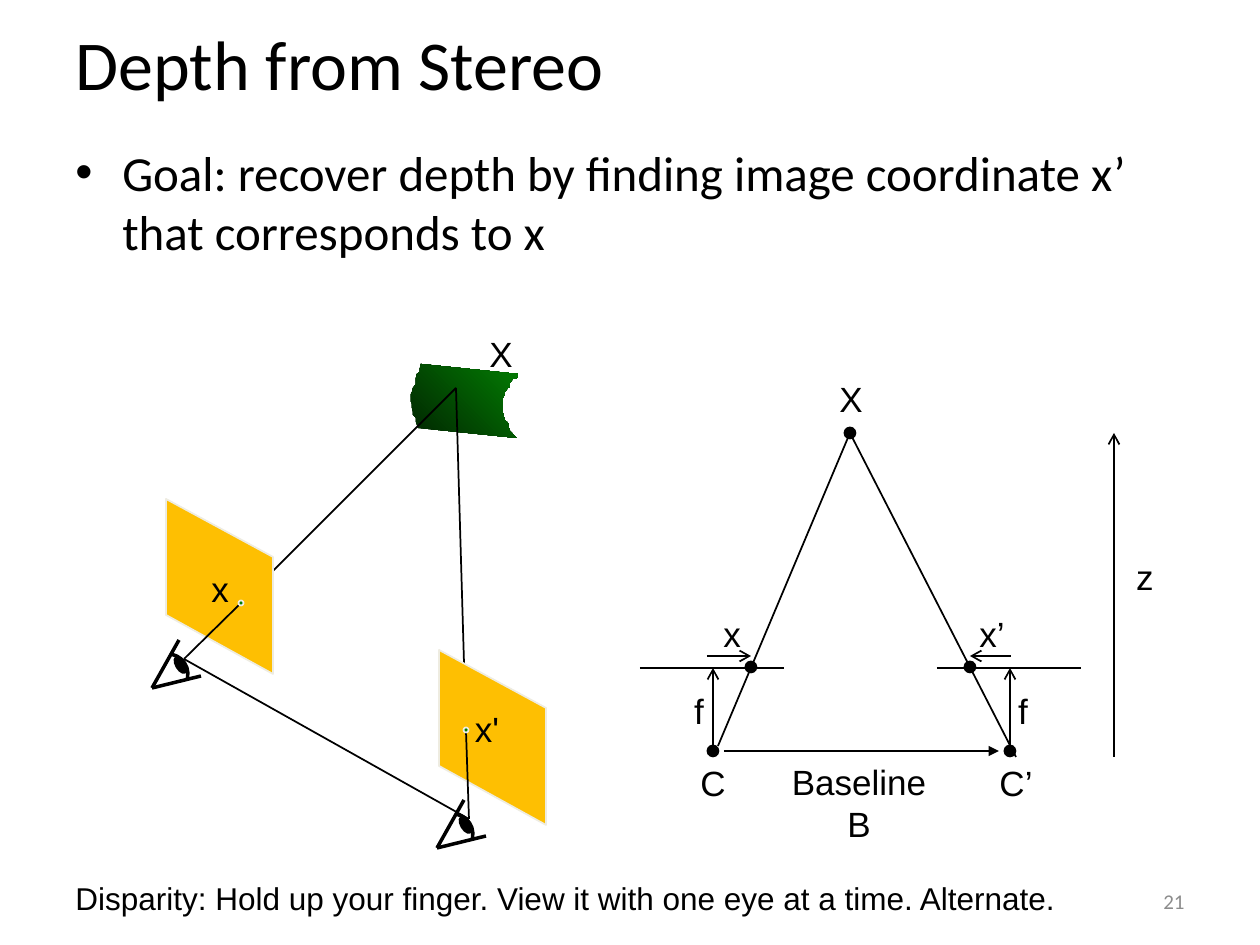
from lxml.etree import SubElement
from pptx import Presentation
from pptx.dml.color import RGBColor
from pptx.enum.shapes import MSO_CONNECTOR, MSO_SHAPE
from pptx.enum.text import MSO_ANCHOR, PP_ALIGN
from pptx.oxml.ns import qn
from pptx.util import Emu, Pt

PIXELS_PER_INCH = 126
BLACK, AMBER, GREEN, DARK_GREEN = "000000", "FEBF02", "037C03", "012501"
PALE, GRAY = "EEECE1", "8C8C8C"


def px(length):
    return Emu(round(length * 914400 / PIXELS_PER_INCH))


def color(hex_string):
    return RGBColor.from_string(hex_string)


def write_text(shape, text, size=20, font="Arial", ink=BLACK,
               align=PP_ALIGN.LEFT, anchor=MSO_ANCHOR.TOP, bullet_indent=0):
    frame = shape.text_frame
    frame.word_wrap = True
    frame.vertical_anchor = anchor
    paragraph = frame.paragraphs[0]
    paragraph.text = text
    paragraph.alignment = align
    if bullet_indent:
        properties = paragraph._p.get_or_add_pPr()
        properties.set("marL", str(px(bullet_indent)))
        properties.set("indent", str(-px(bullet_indent)))
        SubElement(properties, qn("a:buFont")).set("typeface", "Arial")
        SubElement(properties, qn("a:buChar")).set("char", "•")
    for run in paragraph.runs:
        run.font.size = Pt(size)
        run.font.name = font
        run.font.color.rgb = color(ink)


def add_text(slide, box, text, **text_format):
    shape = slide.shapes.add_textbox(*map(px, box))
    write_text(shape, text, **text_format)


def add_label(slide, center, text, width=180, height=56):
    x, y = center
    add_text(slide, (x - width / 2, y - height / 2, width, height), text,
             align=PP_ALIGN.CENTER, anchor=MSO_ANCHOR.MIDDLE)


def add_line(slide, start, end, weight=1, arrowhead=None):
    connector = slide.shapes.add_connector(
        MSO_CONNECTOR.STRAIGHT, *map(px, (*start, *end)))
    connector.line.color.rgb = color(BLACK)
    connector.line.width = Pt(weight)
    if arrowhead:
        outline = connector.line._get_or_add_ln()
        SubElement(outline, qn("a:tailEnd")).set("type", arrowhead)
    SubElement(connector._element.spPr, qn("a:effectLst"))


def style_shape(shape, fill=None, line=None, weight=1):
    shape.shadow.inherit = False
    if fill:
        shape.fill.solid()
        shape.fill.fore_color.rgb = color(fill)
    else:
        shape.fill.background()
    if line:
        shape.line.color.rgb = color(line)
        shape.line.width = Pt(weight)
    else:
        shape.line.fill.background()


def add_preset(slide, kind, box, rotation=0, **style):
    shape = slide.shapes.add_shape(kind, *map(px, box))
    shape.rotation = rotation
    style_shape(shape, **style)


def add_dot(slide, center, diameter=11, fill=BLACK, line=BLACK):
    x, y = center
    box = (x - diameter / 2, y - diameter / 2, diameter, diameter)
    add_preset(slide, MSO_SHAPE.OVAL, box, fill=fill, line=line)


def add_outline(slide, points, **style):
    (start_x, start_y), *rest = [(px(x), px(y)) for x, y in points]
    builder = slide.shapes.build_freeform(start_x, start_y)
    builder.add_line_segments(rest, close=True)
    shape = builder.convert_to_shape()
    style_shape(shape, **style)
    return shape


def placer(left, top):
    return lambda x, y: (left + x, top + y)


def add_surface(slide, left, top):
    at = placer(left, top)
    left_edge = [(10, 0), (9, 4), (9, 8), (6, 10), (5, 14), (5, 20), (2, 24),
                 (1, 28), (0, 30), (0, 38), (1, 40), (1, 44), (2, 48), (2, 51),
                 (5, 54), (5, 58), (6, 61), (7, 64)]
    right_edge = [(106, 74), (99, 67), (98, 64), (97, 59), (94, 56), (93, 53),
                  (92, 49), (92, 34), (94, 30), (94, 28), (97, 24), (99, 23),
                  (99, 19), (102, 15), (106, 14), (107, 10)]
    surface = add_outline(slide, [at(*point) for point in left_edge + right_edge])
    surface.fill.gradient()
    surface.fill.gradient_angle = 45
    for stop, shade in zip(surface.fill.gradient_stops, (DARK_GREEN, GREEN)):
        stop.color.rgb = color(shade)


def add_image_plane(slide, left, top):
    at = placer(left, top)
    corners = [at(0, 0), at(107, 58), at(107, 175), at(0, 116)]
    add_outline(slide, corners, fill=AMBER, line=PALE)


def add_eye(slide, left, top):
    at = placer(left, top)
    add_preset(slide, MSO_SHAPE.ARC, (*at(-4, 14), 40, 40), rotation=12,
               line=BLACK, weight=2)
    add_preset(slide, MSO_SHAPE.OVAL, (*at(24, 16), 9, 18), rotation=329,
               fill=BLACK, line=BLACK)
    for lid_end in (at(27, 0), at(49, 36)):
        add_line(slide, at(0, 48), lid_end, weight=2)


def add_scene(slide, left, top):
    at = placer(left, top)
    scene_point = at(306, 68)
    views = [
        (at(34, 339), at(91, 283), at(16, 179), at(2, 320), at(70, 268), "x"),
        (at(319, 499), at(316, 410), at(289, 330), at(287, 480), at(337, 408), "x'"),
    ]
    add_surface(slide, *at(261, 44))
    add_line(slide, views[0][0], views[1][0])
    for pupil, image_point, plane, eye, label, name in views:
        add_line(slide, image_point, scene_point)
        add_image_plane(slide, *plane)
        add_line(slide, pupil, image_point)
        add_eye(slide, *eye)
        add_dot(slide, image_point, diameter=5, fill=GREEN, line=PALE)
        add_label(slide, label, name)
    add_label(slide, at(351, 33), "X")


def add_geometry(slide, left, top):
    at = placer(left, top)
    apex = at(210, 63)
    cameras = [
        (73, 111, 67, 0, 78, 376, 59, 92, 73, "C", "x"),
        (370, 330, 371, 297, 376, 387, 383, 352, 376, "C’", "x’"),
    ]
    for (center, image, offset, plane, ray_x, ray_y,
         focal_label, image_label, center_label, name, image_name) in cameras:
        add_line(slide, at(plane, 298), at(plane + 144, 298))
        add_line(slide, at(ray_x, ray_y), apex)
        add_line(slide, at(center, 376), at(center, 298), arrowhead="arrow")
        add_line(slide, at(offset, 286), at(image, 286), arrowhead="arrow")
        add_dot(slide, at(center, 381))
        add_dot(slide, at(image, 297))
        add_label(slide, at(focal_label, 341), "f")
        add_label(slide, at(image_label, 263), image_name)
        add_label(slide, at(center_label, 412), name)
    add_dot(slide, apex)
    add_label(slide, at(211, 28), "X")
    add_line(slide, at(84, 381), at(359, 381), weight=1.5, arrowhead="triangle")
    add_label(slide, at(219, 432), "Baseline\vB", height=97)
    add_line(slide, at(474, 387), at(474, 63), arrowhead="arrow")
    add_label(slide, at(505, 206), "z")


def add_heading(slide, left, top, width, height):
    title = slide.shapes.title
    title.left, title.top, title.width, title.height = map(
        px, (left, top, width, height))
    write_text(title, "Depth from Stereo", size=40, font="Calibri",
               anchor=MSO_ANCHOR.MIDDLE)


def add_footer(slide, left, top, width, height):
    add_text(slide, (left, top, 1050, height),
             "Disparity: Hold up your finger. View it with one eye at a time. Alternate.",
             size=18)
    add_text(slide, (left + width - 294, top + 3, 294, height), "21", size=12,
             font="Calibri", ink=GRAY, align=PP_ALIGN.RIGHT,
             anchor=MSO_ANCHOR.MIDDLE)


def main():
    presentation = Presentation()
    presentation.slide_width = px(1260)
    presentation.slide_height = px(945)
    slide = presentation.slides.add_slide(presentation.slide_layouts[5])
    add_heading(slide, 63, 0, 1134, 126)
    add_text(slide, (63, 136, 1134, 708),
             "Goal: recover depth by finding image coordinate x’ that corresponds to x",
             size=28, font="Calibri", bullet_indent=47)
    add_geometry(slide, 640, 370)
    add_scene(slide, 150, 320)
    add_footer(slide, 63, 873, 1134, 50)
    presentation.save("out.pptx")


if __name__ == "__main__":
    main()
